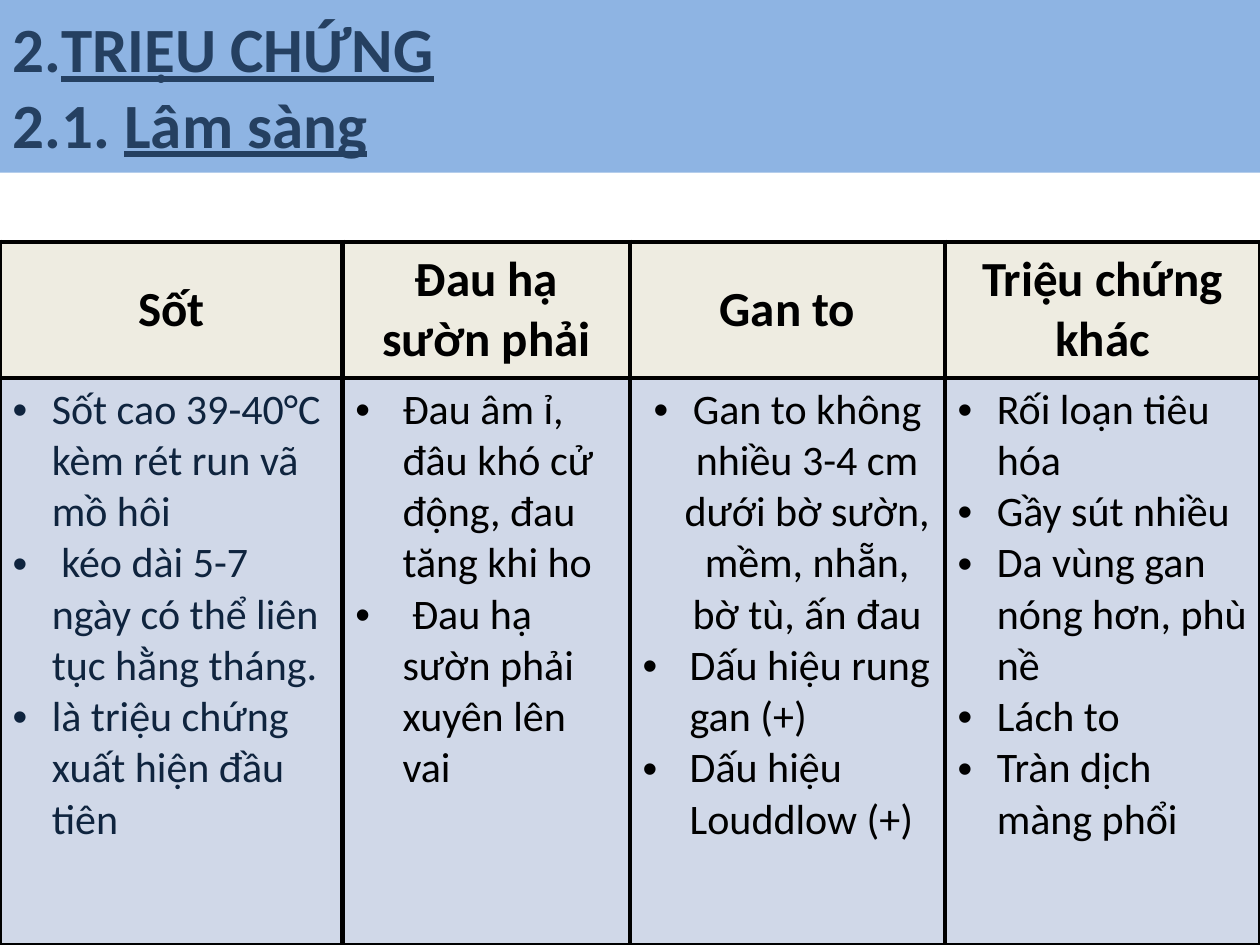
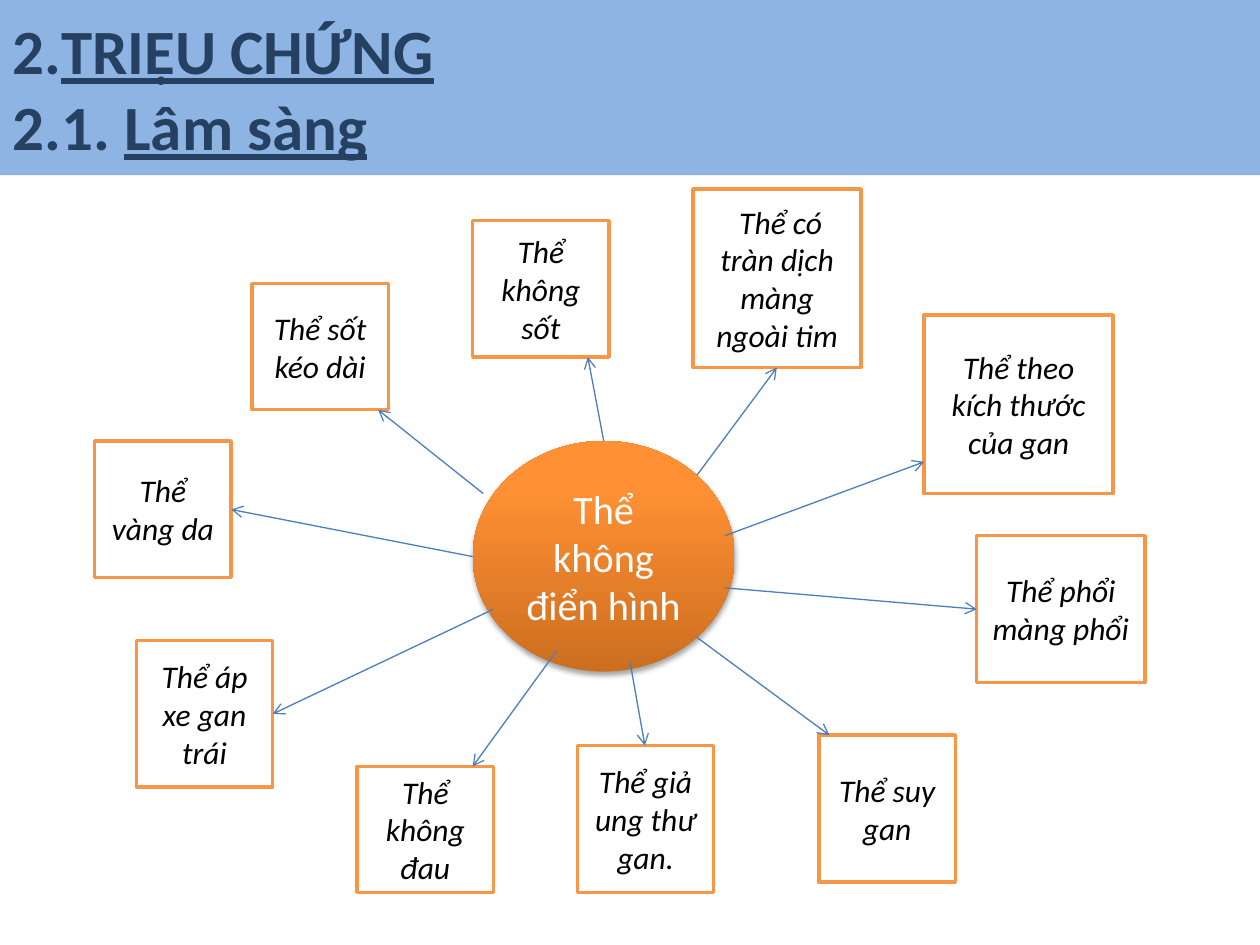
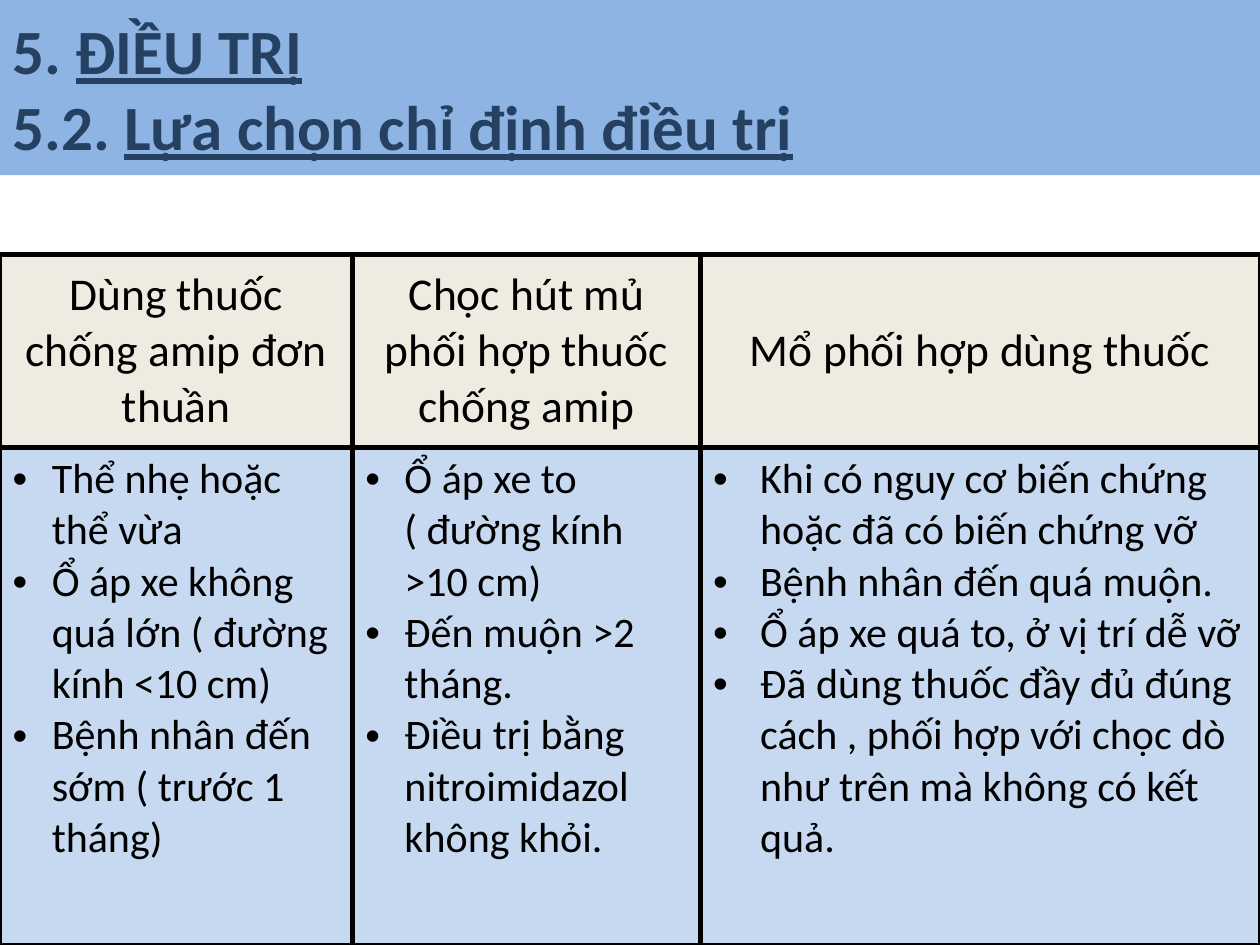
from lxml.etree import SubElement
from pptx import Presentation
from pptx.dml.color import RGBColor
from pptx.enum.shapes import MSO_CONNECTOR, MSO_SHAPE
from pptx.enum.text import MSO_ANCHOR, MSO_AUTO_SIZE, PP_ALIGN
from pptx.oxml import parse_xml
from pptx.oxml.ns import nsdecls, qn
from pptx.util import Cm, Pt

BLACK = RGBColor(0x00, 0x00, 0x00)
WHITE = RGBColor(0xFF, 0xFF, 0xFF)
BAND = RGBColor(0x8E, 0xB4, 0xE3)
TITLE = RGBColor(0x25, 0x40, 0x61)
HEADER = RGBColor(0xEE, 0xEC, 0xE1)
BODY_GREY = RGBColor(0xD0, 0xD8, 0xE8)
BODY_BLUE = RGBColor(0xC6, 0xD9, 0xF1)
NAVY = RGBColor(0x0F, 0x24, 0x3E)
ORANGE = RGBColor(0xF7, 0x96, 0x46)
ORANGE_DARK = RGBColor(0xCC, 0x6E, 0x20)
ORANGE_LIGHT = RGBColor(0xFF, 0x90, 0x34)
ARROW = RGBColor(0x4B, 0x7E, 0xBC)

FONT = "Calibri"
WIDTH, HEIGHT = Cm(25.4), Cm(19.05)
NARROW, WIDE = Cm(0.79), Cm(0.95)  # bullet indents

prs = Presentation()
prs.slide_width, prs.slide_height = WIDTH, HEIGHT


def add_slide(lines, top=0):
    """Add a slide with a title band; each line is (number, underlined text)."""
    s = prs.slides.add_slide(prs.slide_layouts[5])
    sp = s.shapes.title
    sp.left, sp.top, sp.width, sp.height = 0, top, WIDTH, Cm(3.53)
    sp.fill.solid()
    sp.fill.fore_color.rgb = BAND
    tf = sp.text_frame
    tf.auto_size = MSO_AUTO_SIZE.NONE
    tf.vertical_anchor = MSO_ANCHOR.MIDDLE
    for i, line in enumerate(lines):
        p = tf.add_paragraph() if i else tf.paragraphs[0]
        p.alignment = PP_ALIGN.LEFT
        for text, underline in zip(line, (False, True)):
            r = p.add_run()
            r.text = text
            style = {"name": FONT, "size": Pt(36), "bold": True, "underline": underline}
            for name, value in style.items():
                setattr(r.font, name, value)
            r.font.color.rgb = TITLE
    return s


def add_table(s, top, row_heights, columns, header_style, body_fill):
    """Add a bordered table; each column is (width, header, indent, bullets)."""
    table = s.shapes.add_table(2, len(columns), 0, top, WIDTH, HEIGHT - top).table
    table.first_row = table.horz_banding = False
    for row, height in zip(table.rows, row_heights):
        row.height = height
    for c, (width, header, indent, bullets) in enumerate(columns):
        table.columns[c].width = width
        head, body = table.cell(0, c), table.cell(1, c)
        head.text = header
        head.vertical_anchor = MSO_ANCHOR.MIDDLE
        head.text_frame.paragraphs[0].alignment = PP_ALIGN.CENTER
        body.text = "\n".join(bullets)
        for p in body.text_frame.paragraphs:
            pPr = p._p.get_or_add_pPr()
            pPr.set("marL", str(indent))
            pPr.set("indent", str(-indent))
            SubElement(pPr, qn("a:buFont"), typeface="Arial")
            SubElement(pPr, qn("a:buChar"), char="•")
        body_style = {"size": Pt(24), "bold": False}
        for cell, fill, style in ((head, HEADER, header_style), (body, body_fill, body_style)):
            cell.fill.solid()
            cell.fill.fore_color.rgb = fill
            for i, side in enumerate("LRTB"):
                cell._tc.get_or_add_tcPr().insert(i, parse_xml(
                    f'<a:ln{side} {nsdecls("a")} w="{Pt(3)}"><a:solidFill>'
                    f'<a:srgbClr val="{BLACK}"/></a:solidFill></a:ln{side}>'))
            for p in cell.text_frame.paragraphs:
                for r in p.runs:
                    r.font.name = FONT
                    r.font.color.rgb = BLACK
                    for name, value in style.items():
                        setattr(r.font, name, value)
    return table


SYMPTOMS = [("2.", "TRIỆU CHỨNG"), ("2.1. ", "Lâm sàng")]

# Slide 1: clinical symptoms
s = add_slide(SYMPTOMS, Cm(-0.05))
table = add_table(s, Cm(4.88), (Cm(2.74), Cm(11.43)), [
    (Cm(6.91), "Sốt", NARROW, [
        "Sốt cao 39-40°C kèm rét run vã mồ hôi",
        " kéo dài 5-7 ngày có thể liên tục hằng tháng.",
        "là triệu chứng xuất hiện đầu tiên"]),
    (Cm(5.79), "Đau hạ sườn phải", WIDE, [
        "Đau âm ỉ, đâu khó cử động, đau tăng khi ho",
        " Đau hạ sườn phải xuyên lên vai"]),
    (Cm(6.35), "Gan to", WIDE, [
        "Gan to không nhiều 3-4 cm dưới bờ sườn, mềm, nhẵn, bờ tù, ấn đau",
        "Dấu hiệu rung gan (+)",
        "Dấu hiệu Louddlow (+)"]),
    (Cm(6.35), "Triệu chứng khác", NARROW, [
        "Rối loạn tiêu hóa",
        "Gầy sút nhiều",
        "Da vùng gan nóng hơn, phù nề",
        "Lách to",
        "Tràn dịch màng phổi"]),
], {"size": Pt(28), "bold": True}, BODY_GREY)
for p in table.cell(1, 0).text_frame.paragraphs:
    p.runs[0].font.color.rgb = NAVY
p = table.cell(1, 2).text_frame.paragraphs[0]
p.alignment = PP_ALIGN.CENTER
p._p.pPr.set("marL", str(NARROW))
p._p.pPr.set("indent", str(-NARROW))

# Slide 2: atypical forms around a centre
s = add_slide(SYMPTOMS)
centre = s.shapes.add_shape(MSO_SHAPE.OVAL, Cm(9.53), Cm(8.89), Cm(5.28), Cm(4.65))
centre.line.fill.background()
centre.fill.gradient()
centre.fill.gradient_angle = 90
for stop, position, color in zip(centre.fill.gradient_stops, (0, 0.8), (ORANGE_DARK, ORANGE_LIGHT)):
    stop.position = position
    stop.color.rgb = color
centre.shadow.inherit = False
centre._element.spPr.find(qn("a:effectLst")).append(parse_xml(
    f'<a:outerShdw {nsdecls("a")} blurRad="{Pt(3.1)}" dist="{Pt(1.8)}" dir="5400000" '
    f'rotWithShape="0"><a:srgbClr val="{BLACK}"><a:alpha val="35000"/></a:srgbClr></a:outerShdw>'))
labels = [(centre, "Thể không điển hình", {"size": Pt(23)}, WHITE)]

# text, box (left, top, width, height), arrow (from x, y, to x, y), in cm
forms = [
    ("Thể không sốt", (9.53, 4.45, 2.75, 2.75), (12.17, 8.89, 11.85, 7.2)),
    ("Thể sốt kéo dài", (5.08, 5.72, 2.75, 2.54), (9.74, 9.95, 7.62, 8.26)),
    ("Thể vàng da", (1.91, 8.89, 2.75, 2.75), (9.53, 11.22, 4.66, 10.27)),
    ("Thể áp xe gan trái", (2.75, 12.91, 2.75, 2.96), (9.95, 12.28, 5.5, 14.39)),
    ("Thể không đau", (7.2, 15.45, 2.75, 2.54), (11.22, 13.12, 9.53, 15.45)),
    ("Thể giả ung thư gan.", (11.64, 15.03, 2.75, 2.96), (12.7, 13.34, 13, 15.03)),
    ("Thể suy gan", (16.51, 14.82, 2.75, 2.96), (14.05, 12.85, 16.72, 14.82)),
    ("Thể phổi màng phổi", (19.69, 10.8, 3.39, 2.96), (14.61, 11.85, 19.69, 12.28)),
    ("Thể theo kích thước của gan", (18.63, 6.35, 3.81, 3.6), (14.61, 10.8, 18.63, 9.31)),
    (" Thể có tràn dịch màng ngoài tim", (13.97, 3.81, 3.39, 3.6), (14.05, 9.58, 15.66, 7.41)),
]
for text, box, ends in forms:
    sp = s.shapes.add_shape(MSO_SHAPE.RECTANGLE, *map(Cm, box))
    sp.shadow.inherit = False
    sp.fill.solid()
    sp.fill.fore_color.rgb = WHITE
    sp.line.color.rgb = ORANGE
    sp.line.width = Pt(2)
    labels.append((sp, text, {"size": Pt(18), "italic": True}, BLACK))

    arrow = s.shapes.add_connector(MSO_CONNECTOR.STRAIGHT, *map(Cm, ends))
    arrow.line.color.rgb = ARROW
    arrow.line.width = Pt(0.75)
    SubElement(arrow.line._get_or_add_ln(), qn("a:tailEnd"), type="arrow")
    SubElement(arrow._element.spPr, qn("a:effectLst"))

for sp, text, style, color in labels:
    tf = sp.text_frame
    tf.word_wrap = True
    tf.vertical_anchor = MSO_ANCHOR.MIDDLE
    p = tf.paragraphs[0]
    p.alignment = PP_ALIGN.CENTER
    r = p.add_run()
    r.text = text
    r.font.name = FONT
    r.font.color.rgb = color
    for name, value in style.items():
        setattr(r.font, name, value)

# Slide 3: choice of treatment
s = add_slide([("5. ", "ĐIỀU TRỊ"), ("5.2. ", "Lựa chọn chỉ định điều trị")])
add_table(s, Cm(5.13), (Cm(3.89), Cm(10.03)), [
    (Cm(7.11), "Dùng thuốc chống amip đơn thuần", NARROW, [
        "Thể nhẹ hoặc thể vừa",
        "Ổ áp xe không quá lớn ( đường kính <10 cm)",
        "Bệnh nhân đến sớm ( trước 1 tháng)"]),
    (Cm(7.01), "Chọc hút mủ phối hợp thuốc chống amip", NARROW, [
        "Ổ áp xe to ( đường kính >10 cm)",
        "Đến muộn >2 tháng.",
        "Điều trị bằng nitroimidazol không khỏi."]),
    (Cm(11.28), "Mổ phối hợp dùng thuốc", WIDE, [
        "Khi có nguy cơ biến chứng hoặc đã có biến chứng vỡ",
        "Bệnh nhân đến quá muộn.",
        "Ổ áp xe quá to, ở vị trí dễ vỡ",
        "Đã dùng thuốc đầy đủ đúng cách , phối hợp với chọc dò như trên "
        "mà không có kết quả."]),
], {"size": Pt(26), "bold": False}, BODY_BLUE)

prs.save("out.pptx")
